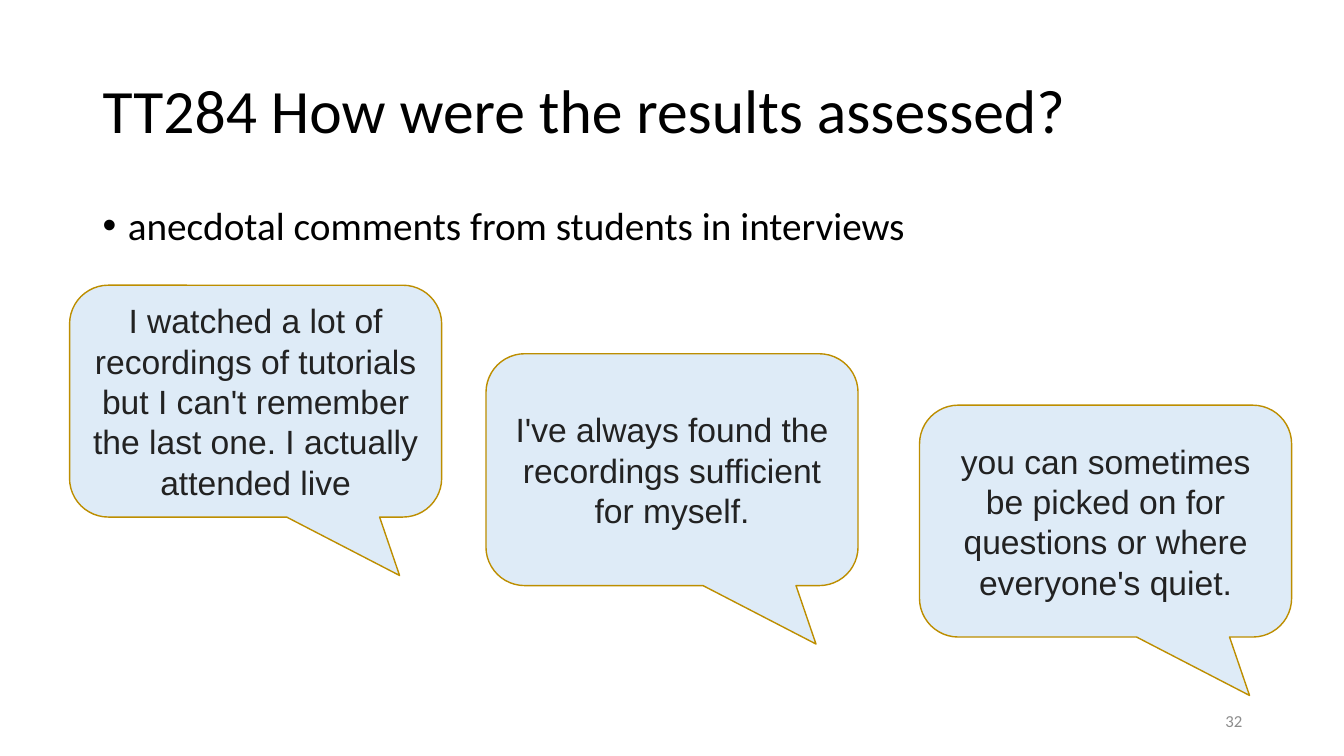
from lxml import etree
from pptx import Presentation
from pptx.dml.color import RGBColor
from pptx.enum.shapes import MSO_SHAPE
from pptx.enum.text import MSO_ANCHOR, PP_ALIGN
from pptx.oxml.ns import qn
from pptx.util import Inches, Pt

BUBBLE = MSO_SHAPE.ROUNDED_RECTANGULAR_CALLOUT
TOP, MIDDLE = MSO_ANCHOR.TOP, MSO_ANCHOR.MIDDLE
LEFT, CENTER, RIGHT = PP_ALIGN.LEFT, PP_ALIGN.CENTER, PP_ALIGN.RIGHT

# Left, top and words of each student comment
QUOTES = [
    (4.82, 3.51, "I've always found the recordings sufficient for myself."),
    (0.69, 2.83, "I watched a lot of recordings of tutorials but I can't "
                 "remember the last one. I actually attended live"),
    (9.12, 4.02, "you can sometimes be picked on for questions or where "
                 "everyone's quiet."),
]


def color(code):
    return RGBColor.from_string(code)


def assign(item, values):
    for name, value in values.items():
        setattr(item, name, value)


def write(shape, text, size, ink, font="Calibri", anchor=MIDDLE, **layout):
    frame = shape.text_frame
    assign(frame, {"word_wrap": True, "vertical_anchor": anchor})
    para = frame.paragraphs[0]
    assign(para, layout)
    run = para.add_run()
    run.text = text
    assign(run.font, {"name": font, "size": Pt(size)})
    run.font.color.rgb = color(ink)
    return para


def add_text(slide, box, text, size, ink, **layout):
    shape = slide.shapes.add_textbox(*map(Inches, box))
    return write(shape, text, size, ink, **layout)


def add_bullet(para, indent):
    props = para._p.get_or_add_pPr()
    props.set("marL", str(indent))
    props.set("indent", str(-indent))
    etree.SubElement(props, qn("a:buFont")).set("typeface", "Arial")
    etree.SubElement(props, qn("a:buChar")).set("char", "•")


def add_quote(slide, left, top, text):
    box = map(Inches, (left, top, 3.69, 2.3))
    shape = slide.shapes.add_shape(BUBBLE, *box)
    shape.shadow.inherit = False
    for i, value in enumerate((0.387, 0.752, 0.167)):
        shape.adjustments[i] = value
    shape.fill.solid()
    shape.fill.fore_color.rgb = color("DEEBF7")
    shape.line.color.rgb = color("BD8E00")
    shape.line.width = Pt(1)
    write(shape, text, 24, "222222", font="Arial", alignment=CENTER)


def main():
    deck = Presentation()
    assign(deck, {"slide_width": Inches(13.33), "slide_height": Inches(7.5)})
    slide = deck.slides.add_slide(deck.slide_layouts[6])

    # Title and bullet
    add_text(slide, (0.92, 0.4, 11.5, 1.45),
             "TT284 How were the results assessed?", 44, "000000",
             alignment=LEFT, line_spacing=0.9)
    point = add_text(slide, (0.92, 2, 11.89, 4.76),
                     "anecdotal comments from students in interviews",
                     28, "000000", anchor=TOP, alignment=LEFT,
                     line_spacing=0.9, space_before=Pt(10))
    add_bullet(point, Inches(0.25))

    # Speech bubbles
    for left, top, text in QUOTES:
        add_quote(slide, left, top, text)

    # Slide number
    add_text(slide, (9.42, 6.95, 3, 0.4), "32", 12, "8C8C8C",
             alignment=RIGHT)

    deck.save("out.pptx")


if __name__ == "__main__":
    main()
